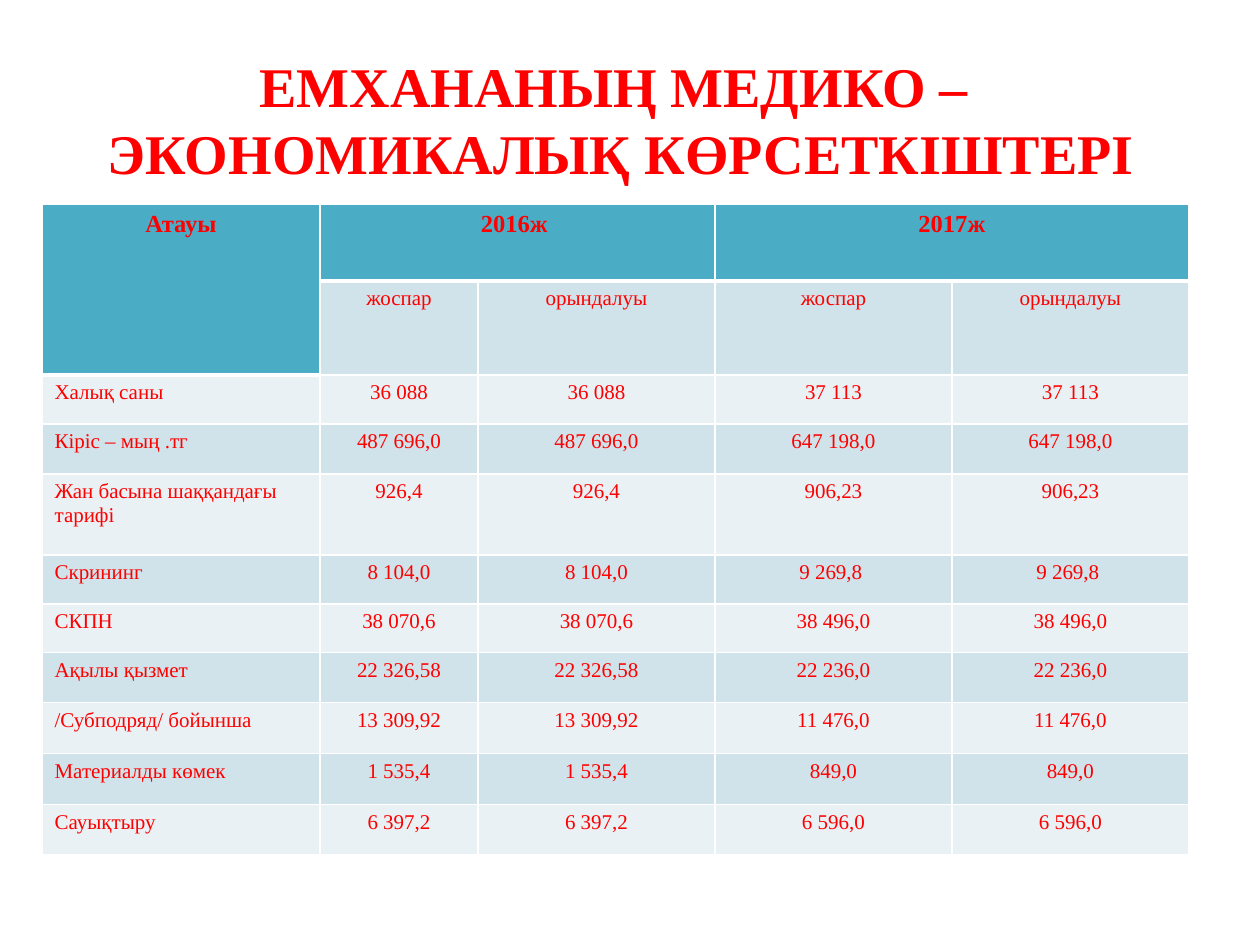
from lxml.etree import SubElement
from pptx import Presentation
from pptx.dml.color import RGBColor
from pptx.enum.text import MSO_ANCHOR, PP_ALIGN
from pptx.oxml.ns import qn
from pptx.util import Pt

PX = 914400 // 126
RED = RGBColor(0xFF, 0x00, 0x00)
TEAL = RGBColor(0x4B, 0xAC, 0xC6)
BANDS = [RGBColor(0xE9, 0xF1, 0xF5), RGBColor(0xD0, 0xE3, 0xEA)]

COLUMN_WIDTHS = [278, 158, 237, 237, 237]
ROW_HEIGHTS = [77, 94, 49, 50, 81, 49, 49, 50, 51, 51, 50]
HEADINGS = [
    ["Атауы", "2016ж ", "", "2017ж", ""],
    ["", "жоспар", "орындалуы", "жоспар", "орындалуы"],
]
# Each indicator has one value per year; plan and result are equal.
INDICATORS = [
    ("Халық саны", "36 088", "37 113"),
    ("Кіріс – мың .тг", "487 696,0", "647 198,0"),
    ("Жан басына шаққандағы\nтарифі", "926,4", "906,23"),
    ("Скрининг", "8 104,0", "9 269,8 "),
    ("СКПН", "38 070,6", "38 496,0"),
    ("Ақылы қызмет", "22 326,58", "22 236,0"),
    ("/Субподряд/ бойынша", "13 309,92", "11 476,0"),
    ("Материалды көмек", "1 535,4", "849,0"),
    ("Сауықтыру", "6 397,2", "6 596,0"),
]


def write(frame, text, size, bold, align):
    frame.text = text
    for paragraph in frame.paragraphs:
        paragraph.alignment = align
        for run in paragraph.runs:
            run.font.name = "Times New Roman"
            run.font.size = Pt(size)
            run.font.bold = bold
            run.font.color.rgb = RED


def add_border(cell, side, points):
    line = SubElement(cell._tc.get_or_add_tcPr(), qn(f"a:ln{side}"), w=str(Pt(points)))
    SubElement(SubElement(line, qn("a:solidFill")), qn("a:srgbClr"), val="FFFFFF")


presentation = Presentation()
presentation.slide_width = 1260 * PX
presentation.slide_height = 945 * PX
slide = presentation.slides.add_slide(presentation.slide_layouts[6])

rows = HEADINGS + [[name, y2016, y2016, y2017, y2017] for name, y2016, y2017 in INDICATORS]
indicators = slide.shapes.add_table(
    len(rows), len(COLUMN_WIDTHS), 42 * PX, 204 * PX,
    sum(COLUMN_WIDTHS) * PX, sum(ROW_HEIGHTS) * PX,
).table
indicators.first_row = False
indicators.horz_banding = False
for column, width in zip(indicators.columns, COLUMN_WIDTHS):
    column.width = width * PX
for row, height in zip(indicators.rows, ROW_HEIGHTS):
    row.height = height * PX

for r, texts in enumerate(rows):
    for c, text in enumerate(texts):
        cell = indicators.cell(r, c)
        last_heading = 1 if c == 0 else 0
        is_heading = r <= last_heading
        add_border(cell, "L", 1)
        add_border(cell, "R", 1)
        add_border(cell, "T", 3 if r == last_heading + 1 else 1)
        add_border(cell, "B", 3 if is_heading else 1)
        cell.fill.solid()
        cell.fill.fore_color.rgb = TEAL if is_heading else BANDS[r % 2]
        align = PP_ALIGN.LEFT if c == 0 and not is_heading else PP_ALIGN.CENTER
        write(cell.text_frame, text, 14 if is_heading else 12, is_heading, align)

for first, last in [((0, 0), (1, 0)), ((0, 1), (0, 2)), ((0, 3), (0, 4))]:
    indicators.cell(*first).merge(indicators.cell(*last))

title = slide.shapes.add_textbox(42 * PX, 45 * PX, 1144 * PX, 149 * PX).text_frame
title.word_wrap = True
title.vertical_anchor = MSO_ANCHOR.TOP
write(title, "ЕМХАНАНЫҢ МЕДИКО –\n ЭКОНОМИКАЛЫҚ КӨРСЕТКІШТЕРІ", 32, True, PP_ALIGN.CENTER)

presentation.save("out.pptx")
